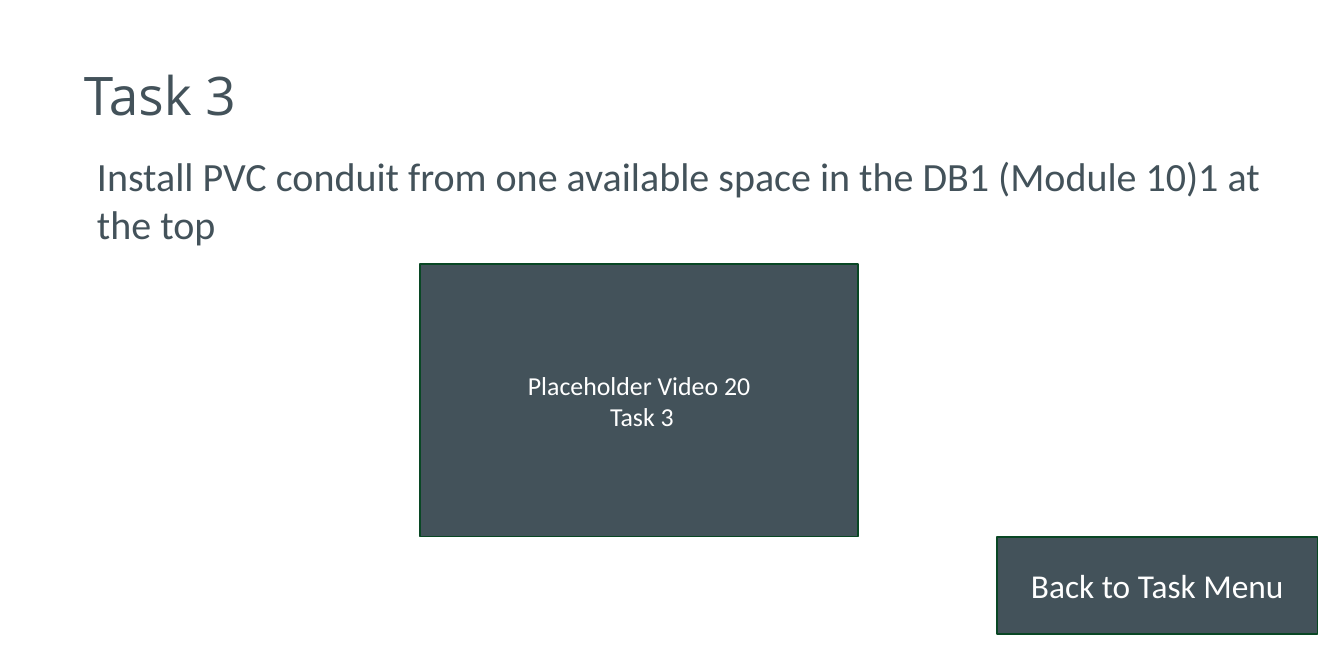
"""Build the Task 3 slide with its video panel and menu button."""
from pptx import Presentation
from pptx.dml.color import RGBColor
from pptx.enum.shapes import MSO_SHAPE
from pptx.enum.text import MSO_ANCHOR, PP_ALIGN
from pptx.util import Inches, Pt

SLATE = "43525A"
GREEN = "094724"
WHITE = "FFFFFF"


def color(code):
    return RGBColor.from_string(code)


class Deck:
    def __init__(self, width, height, font):
        self.file = Presentation()
        self.file.slide_width = Inches(width)
        self.file.slide_height = Inches(height)
        self.font = font
        self.slide = self.file.slides.add_slide(self.file.slide_layouts[6])

    def style(self, frame, text, size, ink, font=None, align=PP_ALIGN.LEFT,
              anchor=MSO_ANCHOR.TOP, space=1.0):
        frame.text = text
        frame.word_wrap = True
        frame.vertical_anchor = anchor
        for line in frame.paragraphs:
            line.alignment = align
            line.line_spacing = space
            for run in line.runs:
                run.font.name = font or self.font
                run.font.size = Pt(size)
                run.font.color.rgb = color(ink)

    def text(self, box, text, size, **look):
        label = self.slide.shapes.add_textbox(*map(Inches, box))
        self.style(label.text_frame, text, size, SLATE, **look)

    def panel(self, box, text, size):
        panel = self.slide.shapes.add_shape(MSO_SHAPE.RECTANGLE, *map(Inches, box))
        panel.shadow.inherit = False
        panel.fill.solid()
        panel.fill.fore_color.rgb = color(SLATE)
        panel.line.color.rgb = color(GREEN)
        panel.line.width = Pt(1)
        self.style(panel.text_frame, text, size, WHITE,
                   align=PP_ALIGN.CENTER, anchor=MSO_ANCHOR.MIDDLE)


def main():
    deck = Deck(11.2, 5.43, "Calibri")
    deck.text((0.6, 0.29, 8.33, 1.05), "Task 3", 31.9, font="Open Sans",
              anchor=MSO_ANCHOR.MIDDLE, space=0.9)
    deck.text((0.71, 1.21, 10.38, 1.99),
              "Install PVC conduit from one available space in the DB1 "
              "(Module 10)1 at the top", 24)
    deck.panel((3.5, 2.2, 3.65, 2.27), "Placeholder Video 20\n Task 3", 15.5)
    deck.panel((8.31, 4.47, 2.67, 0.81), "Back to Task Menu", 20)
    deck.file.save("out.pptx")


if __name__ == "__main__":
    main()
